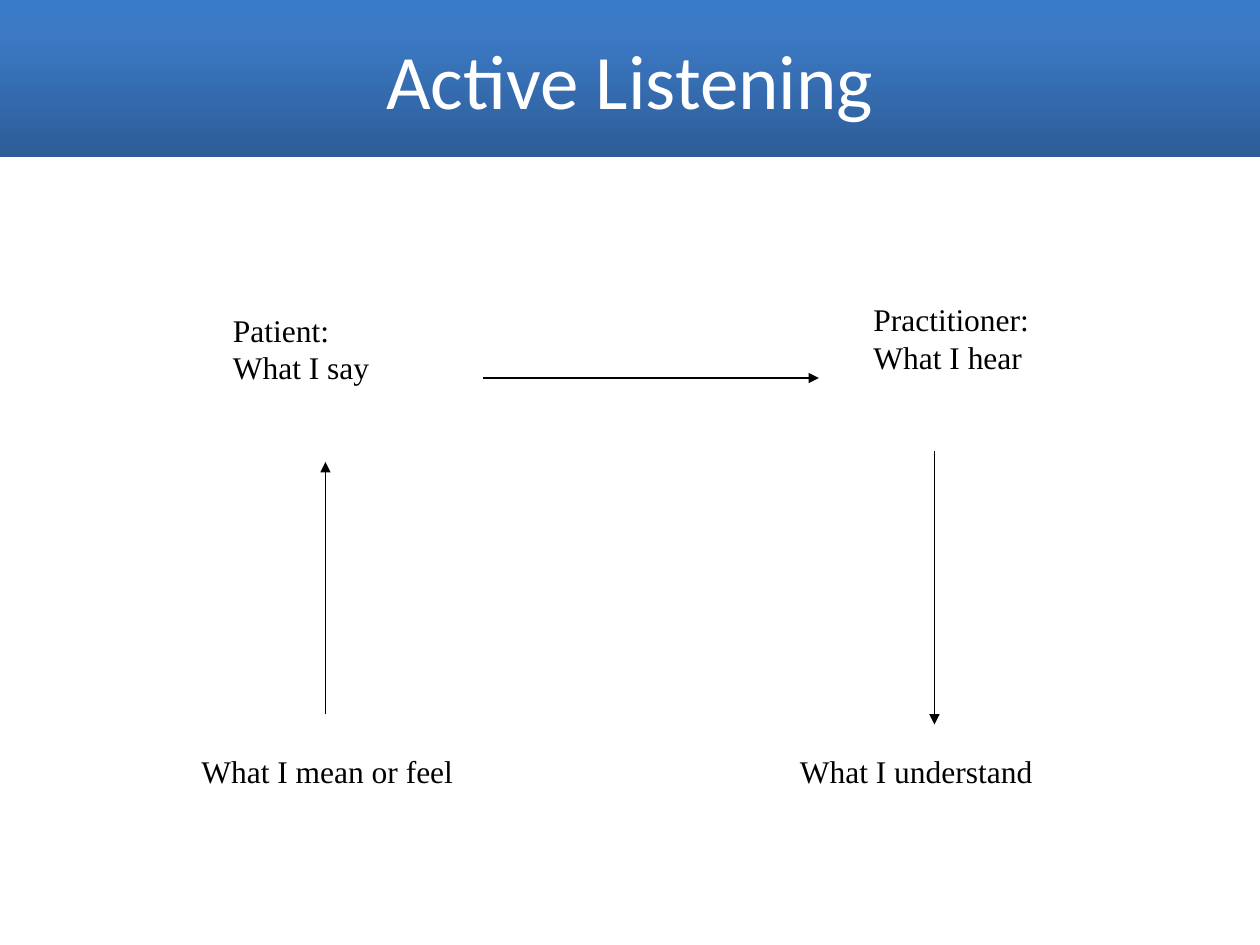
from copy import deepcopy
from lxml import etree
from pptx import Presentation
from pptx.dml.color import RGBColor
from pptx.enum.shapes import MSO_CONNECTOR, MSO_SHAPE
from pptx.enum.text import MSO_ANCHOR, PP_ALIGN
from pptx.oxml.ns import qn
from pptx.util import Inches, Pt

RECT, LINE = MSO_SHAPE.RECTANGLE, MSO_CONNECTOR.STRAIGHT
MIDDLE, CENTER = MSO_ANCHOR.MIDDLE, PP_ALIGN.CENTER
BLACK = RGBColor(0x00, 0x00, 0x00)
WHITE = RGBColor(0xFF, 0xFF, 0xFF)
NAVY = RGBColor(0x2D, 0x5C, 0x97)
BLUE = RGBColor(0x3C, 0x7A, 0xC5)
SKY = RGBColor(0x39, 0x7B, 0xC9)
TITLE_FONT = {"name": "Calibri", "size": Pt(44)}
BODY_FONT = {"name": "Times New Roman", "size": Pt(18)}

prs = Presentation()
prs.slide_width, prs.slide_height = Inches(10), Inches(7.5)
COL, ROW = prs.slide_width / 120, prs.slide_height / 90
s = prs.slides.add_slide(prs.slide_layouts[6])


def cells(x, y, w, h):
    return [round(v) for v in (x * COL, y * ROW, w * COL, h * ROW)]


def write(tf, lines, font, color, align=None):
    tf.word_wrap = True
    for i, line in enumerate(lines):
        p = tf.paragraphs[0] if i == 0 else tf.add_paragraph()
        p.alignment = align
        r = p.add_run()
        r.text = line
        for key, value in font.items():
            setattr(r.font, key, value)
        r.font.color.rgb = color


sp = s.shapes.add_shape(RECT, *cells(0, 0, 120, 15))
sp.shadow.inherit = False
sp.line.fill.background()
sp.fill.gradient()
sp.fill.gradient_angle = 90
gs_list = sp._element.spPr.find(qn("a:gradFill")).find(qn("a:gsLst"))
gs_list.insert(1, deepcopy(gs_list[0]))
stops = [(0, NAVY), (0.8, BLUE), (1, SKY)]
for stop, (position, color) in zip(sp.fill.gradient_stops, stops):
    stop.position = position
    stop.color.rgb = color
sp.text_frame.vertical_anchor = MIDDLE
write(sp.text_frame, ["Active Listening"], TITLE_FONT, WHITE, CENTER)

labels = [
    (18, 71, 34.4, 6, ["What I mean or feel"]),
    (21, 29, 19.8, 10.8, ["Patient:", "What I say"]),
    (82, 28, 22.2, 10.8, ["Practitioner:", "What I hear"]),
    (75, 71, 40.7, 6, ["What I understand"]),
]
for x, y, w, h, lines in labels:
    sp = s.shapes.add_textbox(*cells(x, y, w, h))
    write(sp.text_frame, lines, BODY_FONT, BLACK)

arrows = [(31, 68, 31, 44), (46, 36, 78, 36), (89, 43, 89, 69)]
for ends in arrows:
    sp = s.shapes.add_connector(LINE, *cells(*ends))
    sp.line.color.rgb = BLACK
    sp.line.width = Pt(0.75)
    etree.SubElement(sp.line._get_or_add_ln(), qn("a:tailEnd"), type="triangle")
    etree.SubElement(sp._element.spPr, qn("a:effectLst"))

prs.save("out.pptx")
